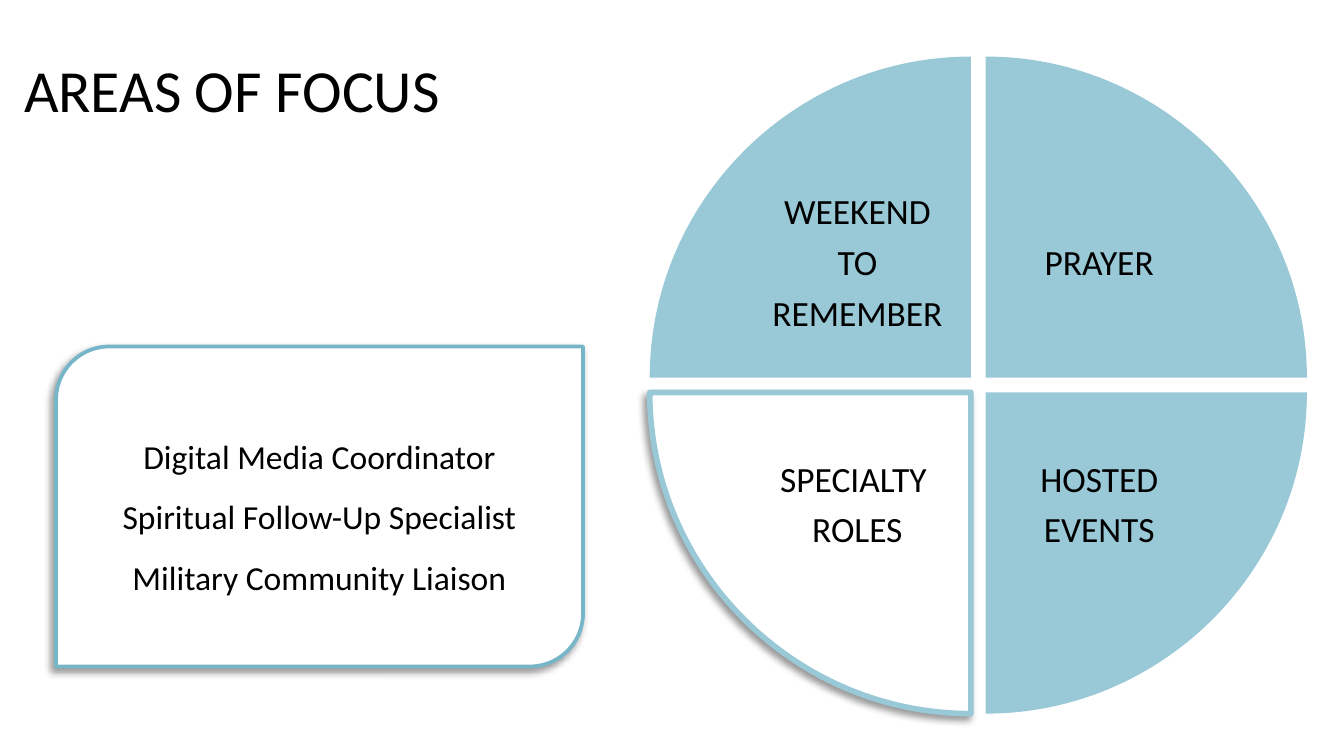
from lxml.etree import SubElement
from pptx import Presentation
from pptx.dml.color import RGBColor
from pptx.enum.shapes import MSO_SHAPE
from pptx.enum.text import MSO_ANCHOR, MSO_AUTO_SIZE, PP_ALIGN
from pptx.oxml.ns import qn
from pptx.util import Cm, Pt

BLACK = RGBColor(0x00, 0x00, 0x00)
WHITE = RGBColor(0xFF, 0xFF, 0xFF)
LIGHT_BLUE = RGBColor(0x99, 0xC9, 0xD7)
BLUE = RGBColor(0x77, 0xB6, 0xC9)
FONT = "Calibri"

CENTER_X, CENTER_Y = 18.49, 7.28
RADIUS, HALF_GAP = 6.07, 0.14
ARC_PULL = 0.55  # control point distance of a quarter circle, in radii
OUTER_INSET, INNER_INSET = Cm(2.16), Cm(0.38)

ROLES = [
    "Digital Media Coordinator",
    "Spiritual Follow-Up Specialist",
    "Military Community Liaison",
]


def style_font(p, size):
    for r in p.runs:
        r.font.name = FONT
        r.font.size = Pt(size)
        r.font.color.rgb = BLACK


def set_lines(sp, lines, size, line_spacing, space_after=0):
    tf = sp.text_frame
    tf.word_wrap = True
    tf.vertical_anchor = MSO_ANCHOR.MIDDLE
    tf.text = "\n".join(lines)
    for p in tf.paragraphs:
        p.alignment = PP_ALIGN.CENTER
        p.line_spacing = line_spacing
        p.space_after = Pt(space_after)
        style_font(p, size)


def style_shape(sp, fill, line=None, width=0):
    sp.shadow.inherit = False
    sp.fill.solid()
    sp.fill.fore_color.rgb = fill
    if line is None:
        sp.line.fill.background()
    else:
        sp.line.color.rgb = line
        sp.line.width = Pt(width)


def add_shadow(sp):
    """Drop a soft shadow to the lower left of a styled shape."""
    effects = sp._element.spPr.find(qn("a:effectLst"))
    shadow = SubElement(effects, qn("a:outerShdw"), blurRad=str(Pt(4)),
                        dist=str(Pt(3)), dir=str(135 * 60000),
                        algn="ctr", rotWithShape="0")
    color = SubElement(shadow, qn("a:srgbClr"), val=str(BLACK))
    SubElement(color, qn("a:alpha"), val="40000")


def add_title(slide, text):
    title = slide.shapes.title
    title.left, title.top = Cm(0.2), Cm(0.87)
    title.width, title.height = Cm(15.67), Cm(1.47)
    tf = title.text_frame
    tf.text = text
    tf.auto_size = MSO_AUTO_SIZE.NONE
    tf.vertical_anchor = MSO_ANCHOR.TOP
    p = tf.paragraphs[0]
    p.alignment = PP_ALIGN.LEFT
    style_font(p, 32)


def round_outer_side(sp):
    """Turn the long side of a right triangle into a quarter-circle curve."""
    points = list(sp._element.spPr.iter(qn("a:pt")))
    corner, start, end = [(int(pt.get("x")), int(pt.get("y")))
                          for pt in points]
    controls = [
        [round(p + ARC_PULL * (q - c)) for p, q, c in zip(near, far, corner)]
        for near, far in ((start, end), (end, start))]
    side = points[-1].getparent()
    curve = side.makeelement(qn("a:cubicBezTo"))
    for x, y in (*controls, end):
        SubElement(curve, qn("a:pt"), x=str(x), y=str(y))
    side.getparent().replace(side, curve)


def add_quadrant(slide, dx, dy, lines, highlighted=False):
    """Add a quarter disc; dx and dy are its directions from the centre."""
    x, y = CENTER_X + dx * HALF_GAP, CENTER_Y + dy * HALF_GAP
    builder = slide.shapes.build_freeform(Cm(x), Cm(y))
    builder.add_line_segments([(Cm(x + dx * RADIUS), Cm(y)),
                               (Cm(x), Cm(y + dy * RADIUS))], close=False)
    builder.add_line_segments([], close=True)
    sp = builder.convert_to_shape()
    round_outer_side(sp)
    if highlighted:
        style_shape(sp, WHITE, LIGHT_BLUE, 3)
        add_shadow(sp)
    else:
        style_shape(sp, LIGHT_BLUE)
    set_lines(sp, lines, 19, 0.9, space_after=6.65)
    tf = sp.text_frame
    tf.margin_left, tf.margin_right = (
        (OUTER_INSET, INNER_INSET) if dx < 0 else (INNER_INSET, OUTER_INSET))
    tf.margin_top, tf.margin_bottom = (
        (OUTER_INSET, INNER_INSET) if dy < 0 else (INNER_INSET, OUTER_INSET))


def add_roles_box(slide, lines):
    sp = slide.shapes.add_shape(MSO_SHAPE.ROUND_2_DIAG_RECTANGLE,
                                Cm(1.06), Cm(6.55), Cm(9.96), Cm(6.05))
    style_shape(sp, WHITE, BLUE, 2)
    add_shadow(sp)
    set_lines(sp, lines, 18, 1.5)


def main():
    prs = Presentation()
    prs.slide_width, prs.slide_height = Cm(25.4), Cm(14.29)
    slide = prs.slides.add_slide(prs.slide_layouts[5])
    add_title(slide, "AREAS OF FOCUS")
    add_quadrant(slide, -1, -1, ["WEEKEND", "TO", "REMEMBER"])
    add_quadrant(slide, 1, -1, ["PRAYER"])
    add_quadrant(slide, -1, 1, ["SPECIALTY ", "ROLES"], highlighted=True)
    add_roles_box(slide, ROLES)
    add_quadrant(slide, 1, 1, ["HOSTED", "EVENTS"])
    prs.save("out.pptx")


if __name__ == "__main__":
    main()
